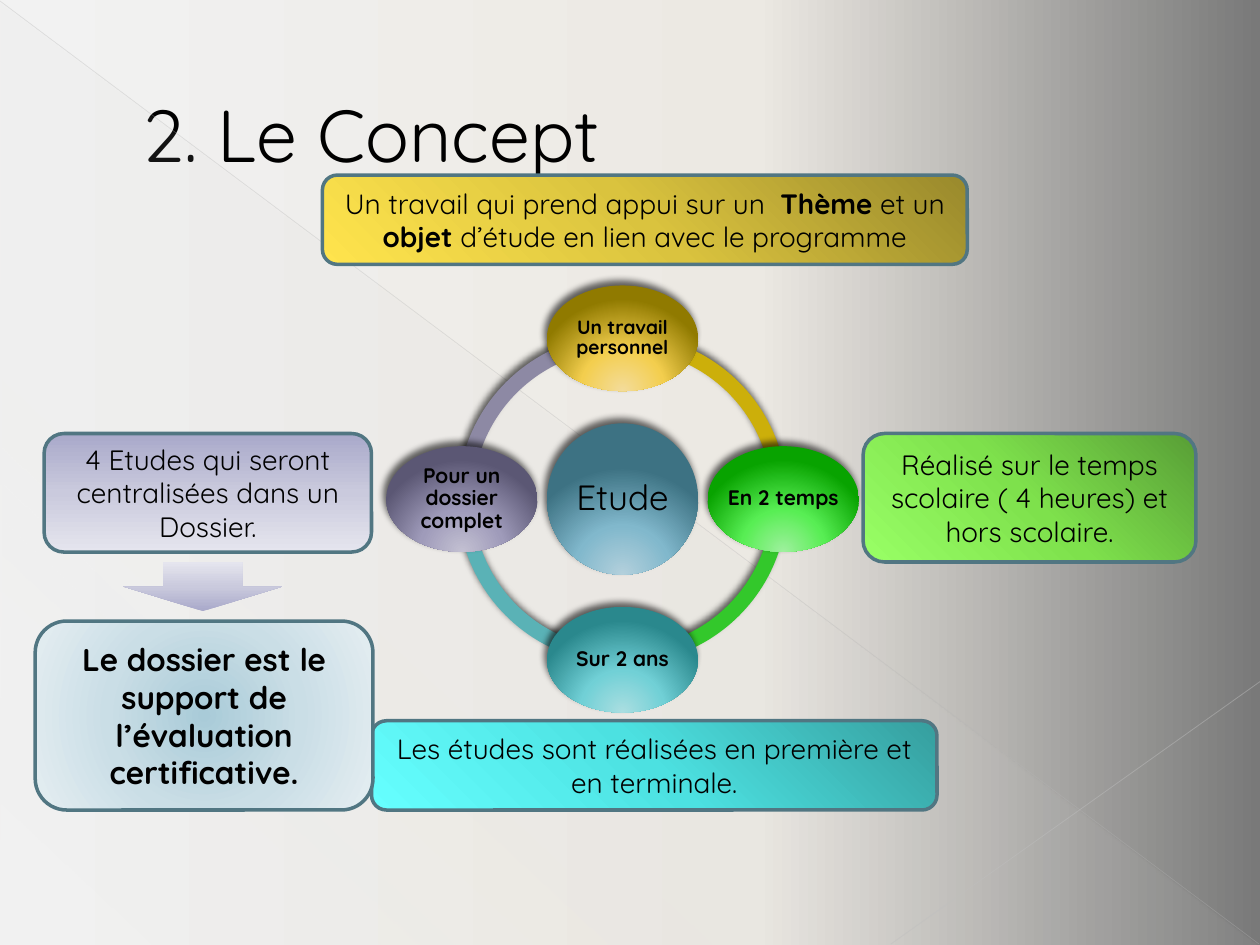
"""Build the "Le Concept" slide: a ring of four ideas around the study, with explanations."""
from lxml import etree
from pptx import Presentation
from pptx.dml.color import RGBColor
from pptx.enum.shapes import MSO_CONNECTOR, MSO_SHAPE
from pptx.enum.text import MSO_ANCHOR, MSO_AUTO_SIZE, PP_ALIGN
from pptx.oxml.ns import qn
from pptx.util import Cm, Pt

STRAIGHT = MSO_CONNECTOR.STRAIGHT
ARC, OVAL, ROUND = MSO_SHAPE.BLOCK_ARC, MSO_SHAPE.OVAL, MSO_SHAPE.ROUNDED_RECTANGLE
TRIANGLE, ARROW = MSO_SHAPE.RIGHT_TRIANGLE, MSO_SHAPE.DOWN_ARROW
MIDDLE, NO_FIT = MSO_ANCHOR.MIDDLE, MSO_AUTO_SIZE.NONE
CENTER, LEFT = PP_ALIGN.CENTER, PP_ALIGN.LEFT

rgb = RGBColor.from_string
BLACK, BORDER = rgb("000000"), rgb("517682")
VEIL, RAY, RAY_LIGHT = rgb("D4D2D0"), rgb("B7B7B7"), rgb("BFBFBF")
PAGE = [rgb("F2F2F2"), rgb("ECE9E3"), rgb("797979")]
BLUE = [rgb("B3D0DC"), rgb("81B8CC"), rgb("3D7283")]
GOLD = [rgb("F3DC9B"), rgb("F3CE4E"), rgb("907A00")]
GREEN = [rgb("9FF09E"), rgb("58EE54"), rgb("08A300")]
TEAL = [rgb("ABDEE1"), rgb("71D0D6"), rgb("2A888D")]
PURPLE = [rgb("C3C0D2"), rgb("9F9BBA"), rgb("5B5774")]
YELLOW_BOX = [rgb("99892C"), rgb("DAC33E"), rgb("FFE44D")]
GREEN_BOX = [rgb("589E36"), rgb("7EE14C"), rgb("99FF66")]
CYAN_BOX = [rgb("369E9E"), rgb("4CE1E1"), rgb("66FFFF")]
LILAC_BOX = [rgb("A9A9CA"), rgb("CACADD"), rgb("E5E5EE")]
SKY_BOX = [rgb("A9CBD8"), rgb("CADEE6"), rgb("E5EEF2")]
ARC_PURPLE, ARC_TEAL = rgb("8D89A4"), rgb("5AB2B6")
ARC_GREEN, ARC_GOLD = rgb("33C82B"), rgb("CCAF0A")


def paint(owner, element, colors, places, angle=0, focus=None, alphas=(100, 100, 100)):
    """Fill with a linear gradient, or a circular one around focus."""
    owner.fill.gradient()
    grad = element.find(".//" + qn("a:gradFill"))
    for child in list(grad):
        grad.remove(child)
    stops = etree.SubElement(grad, qn("a:gsLst"))
    for color, place, alpha in zip(colors, places, alphas):
        gs = etree.SubElement(stops, qn("a:gs"), pos=str(place * 1000))
        clr = etree.SubElement(gs, qn("a:srgbClr"), val=str(color))
        if alpha < 100:
            etree.SubElement(clr, qn("a:alpha"), val=str(alpha * 1000))
    if focus:
        circle = etree.SubElement(grad, qn("a:path"), {"path": "circle"})
        sides = {k: str(v * 1000) for k, v in zip("ltrb", focus)}
        etree.SubElement(circle, qn("a:fillToRect"), sides)
    else:
        etree.SubElement(grad, qn("a:lin"), ang=str(angle * 60000), scaled="0")


def write(tf, runs, size, align=CENTER, inset=None):
    """Write (text, bold) runs as one paragraph in the middle of the frame."""
    frame = {"word_wrap": True, "auto_size": NO_FIT, "vertical_anchor": MIDDLE}
    if inset is not None:
        for side in ("left", "top", "right", "bottom"):
            frame["margin_" + side] = Cm(inset)
    for name, value in frame.items():
        setattr(tf, name, value)
    p = tf.paragraphs[0]
    p.alignment = align
    for text, bold in runs:
        r = p.add_run()
        r.text = text
        for name, value in {"name": "Quicksand", "size": Pt(size), "bold": bold}.items():
            setattr(r.font, name, value)
        r.font.color.rgb = BLACK
    return p


prs = Presentation()
prs.slide_width, prs.slide_height = Cm(25.4), Cm(19.05)
s = prs.slides.add_slide(prs.slide_layouts[5])
paint(s.background, s.element, PAGE, (0, 60, 100))

sp = s.shapes.add_shape(TRIANGLE, Cm(0.02), Cm(0.05), Cm(25.35), Cm(19))
sp.shadow.inherit = False
sp.line.fill.background()
paint(sp, sp.element, [VEIL] * 3, (0, 70, 100), 133, alphas=(10, 8, 1))

rays = [
    ((0, 0.02, 25.38, 19.03), RAY, 0.39, 35),
    ((25.4, 13.74, 17.96, 19.03), RAY_LIGHT, 0.47, 45),
]
for ends, color, width, alpha in rays:
    sp = s.shapes.add_connector(STRAIGHT, *map(Cm, ends))
    sp.line.color.rgb, sp.line.width = color, Pt(width)
    clr = sp.element.spPr.find(".//" + qn("a:srgbClr"))
    etree.SubElement(clr, qn("a:alpha"), val=str(alpha * 1000))
    etree.SubElement(sp.element.spPr, qn("a:effectLst"))

title = s.shapes.title
title.left, title.top, title.width, title.height = Cm(1.27), Cm(0.74), Cm(22.86), Cm(3.89)
p = write(title.text_frame, [("2. Le Concept", False)], 42, LEFT)
p._p.get_or_add_pPr().set("marL", str(Cm(1.35)))

CX, CY, RING, REACH = 12.55, 10.06, 6.65, 3.24
NODE_W, NODE_H = 3.05, 2.13
shaded = []
arcs = [(108, 162, ARC_PURPLE), (54, 108, ARC_TEAL), (0, 54, ARC_GREEN), (162, 0, ARC_GOLD)]
for start, end, color in arcs:
    sp = s.shapes.add_shape(ARC, Cm(CX - RING / 2), Cm(CY - RING / 2), Cm(RING), Cm(RING))
    for i, value in enumerate((start, end, 0.046)):
        sp.adjustments[i] = value
    sp.fill.solid()
    sp.fill.fore_color.rgb = color
    shaded.append(sp)

nodes = [
    ("Etude", 0, 0, NODE_W, 20, False, BLUE),
    ("Un travail personnel", 0, -1, NODE_H, 11, True, GOLD),
    ("En 2 temps", 1, 0, NODE_H, 12, True, GREEN),
    ("Sur 2 ans", 0, 1, NODE_H, 12, True, TEAL),
    ("Pour un dossier complet", -1, 0, NODE_H, 12, True, PURPLE),
]
for text, dx, dy, height, size, bold, colors in nodes:
    left, top = CX + dx * REACH - NODE_W / 2, CY + dy * REACH - height / 2
    box = [Cm(v) for v in (left, top, NODE_W, height)]
    sp = s.shapes.add_shape(OVAL, *box)
    paint(sp, sp.element, colors, (0, 46, 100), focus=(50, 155, 50, -55))
    shaded.append(sp)
    p = write(s.shapes.add_textbox(*box).text_frame, [(text, bold)], size, inset=0.05)
    p.line_spacing = 0.9

for sp in shaded:
    sp.line.fill.background()
    sp.shadow.inherit = False
    effects = sp.element.spPr.find(qn("a:effectLst"))
    shade = etree.SubElement(effects, qn("a:outerShdw"), blurRad=str(Pt(4)), dist=str(Pt(3)),
                             dir=str(245 * 60000), rotWithShape="0")
    clr = etree.SubElement(shade, qn("a:srgbClr"), val=str(BLACK))
    etree.SubElement(clr, qn("a:alpha"), val="60000")

theme_runs = [
    ("Un travail qui prend appui sur un  ", False), ("Thème", True), (" et un ", False),
    ("objet ", True), ("d’étude en lien avec le programme", False),
]
time_runs = [("Réalisé sur le temps scolaire ( 4 heures) et hors scolaire.", False)]
years_runs = [("Les études sont réalisées en première et en terminale.", False)]
folder_runs = [("4 Etudes qui seront centralisées dans un Dossier.", False)]
support_runs = [("Le dossier est le support de l’évaluation certificative.", True)]
CENTRED = (50, 50, 50, 50)
boxes = [
    (ROUND, (6.5, 3.53, 13, 1.8), YELLOW_BOX, 135, None, theme_runs, 16),
    (ROUND, (17.4, 8.74, 6.71, 2.59), GREEN_BOX, 135, None, time_runs, 16),
    (ROUND, (7.49, 14.53, 11.4, 1.8), CYAN_BOX, 135, None, years_runs, 16),
    (ROUND, (0.89, 8.74, 6.6, 2.39), LILAC_BOX, 90, None, folder_runs, 16),
    (ROUND, (0.71, 12.52, 6.81, 3.81), SKY_BOX, 0, CENTRED, support_runs, 18),
    (ARROW, (2.49, 11.33, 3.2, 0.99), LILAC_BOX, 270, None, [], 16),
]
for kind, place, colors, angle, focus, runs, size in boxes:
    sp = s.shapes.add_shape(kind, *map(Cm, place))
    sp.shadow.inherit = False
    paint(sp, sp.element, colors, (0, 50, 100), angle, focus)
    if runs:
        sp.line.color.rgb, sp.line.width = BORDER, Pt(2)
        write(sp.text_frame, runs, size)
    else:
        sp.line.fill.background()

prs.save("out.pptx")
